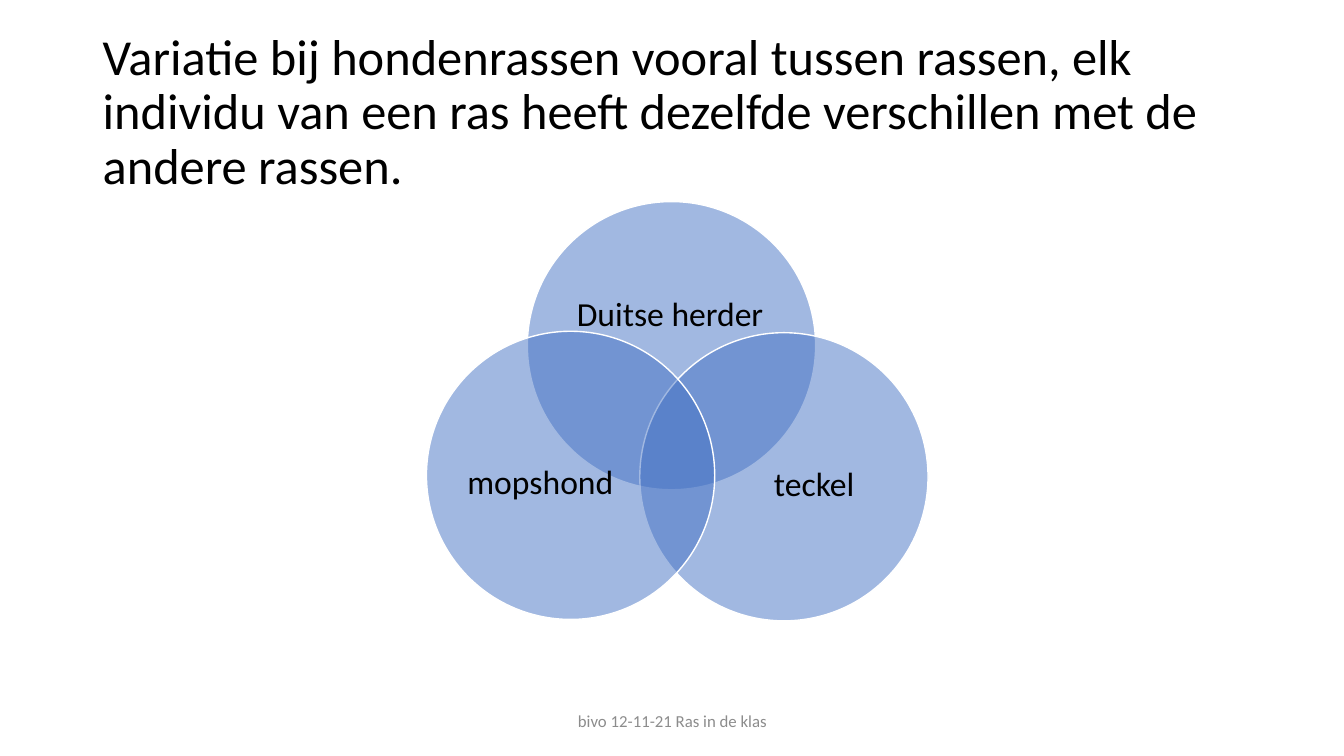
from dataclasses import dataclass

from lxml import etree
from pptx import Presentation
from pptx.dml.color import RGBColor
from pptx.enum.shapes import MSO_SHAPE
from pptx.enum.text import MSO_ANCHOR, PP_ALIGN
from pptx.oxml.ns import qn
from pptx.util import Inches, Pt

ELLIPSE = MSO_SHAPE.OVAL
MIDDLE = MSO_ANCHOR.MIDDLE
LEFT, CENTER = PP_ALIGN.LEFT, PP_ALIGN.CENTER


@dataclass(frozen=True)
class Theme:
    font: str = "Calibri"
    text: RGBColor = RGBColor(0x00, 0x00, 0x00)
    muted: RGBColor = RGBColor(0x8C, 0x8C, 0x8C)
    circle: RGBColor = RGBColor(0x44, 0x72, 0xC4)
    outline: RGBColor = RGBColor(0xFF, 0xFF, 0xFF)
    circle_opacity: int = 50
    title_size: int = 36
    label_size: int = 24
    footer_size: int = 12


THEME = Theme()
SLIDE_WIDTH, SLIDE_HEIGHT = 13.33, 7.5

TITLE = ("Variatie bij hondenrassen vooral tussen rassen, elk individu van een ras "
         "heeft dezelfde verschillen met de andere rassen.")
FOOTER = "bivo 12-11-21 Ras in de klas"

# Breed, circle offset and label box (left, top, width, height), in diameters
BREEDS = [
    ("Duitse herder", (0.35, 0), (0.13, 0.17, 0.73, 0.45)),
    ("teckel", (0.74, 0.455), (0.305, 0.255, 0.6, 0.55)),
    ("mopshond", (0, 0.45), (0.095, 0.255, 0.6, 0.55)),
]
VENN_HEIGHT_IN_DIAMETERS = 1.455


def add_text(slide, box, text, size, color=THEME.text, align=CENTER,
             spacing=0.9, inset=None):
    frame = slide.shapes.add_textbox(*map(Inches, box)).text_frame
    frame.word_wrap = True
    frame.vertical_anchor = MIDDLE
    if inset is not None:
        frame.margin_left = frame.margin_right = Inches(inset)
        frame.margin_top = frame.margin_bottom = Inches(inset)
    paragraph = frame.paragraphs[0]
    paragraph.text = text
    paragraph.alignment = align
    paragraph.line_spacing = spacing
    paragraph.font.name = THEME.font
    paragraph.font.size = Pt(size)
    paragraph.font.color.rgb = color


def add_circle(slide, left, top, diameter):
    circle = slide.shapes.add_shape(
        ELLIPSE, *map(Inches, (left, top, diameter, diameter)))
    circle.shadow.inherit = False
    circle.fill.solid()
    circle.fill.fore_color.rgb = THEME.circle
    fill_color = circle.fill._xPr.find(qn("a:solidFill"))[0]
    etree.SubElement(fill_color, qn("a:alpha"), val=str(THEME.circle_opacity * 1000))
    circle.line.color.rgb = THEME.outline
    circle.line.width = Pt(1)


def add_venn(slide, box):
    left, top, _, height = box
    diameter = height / VENN_HEIGHT_IN_DIAMETERS
    for breed, (dx, dy), (label_x, label_y, label_w, label_h) in BREEDS:
        circle_left, circle_top = left + dx * diameter, top + dy * diameter
        add_circle(slide, circle_left, circle_top, diameter)
        label_box = (circle_left + label_x * diameter, circle_top + label_y * diameter,
                     label_w * diameter, label_h * diameter)
        add_text(slide, label_box, breed, THEME.label_size, inset=0)


def add_breeds_slide(deck):
    slide = deck.slides.add_slide(deck.slide_layouts[6])
    add_text(slide, (0.92, 0.4, 11.5, 1.45), TITLE, THEME.title_size, align=LEFT)
    add_venn(slide, (4.23, 2, 4.98, 4.16))
    add_text(slide, (4.42, 6.95, 4.5, 0.4), FOOTER, THEME.footer_size,
             color=THEME.muted, spacing=1.0)


def main():
    deck = Presentation()
    deck.slide_width, deck.slide_height = Inches(SLIDE_WIDTH), Inches(SLIDE_HEIGHT)
    add_breeds_slide(deck)
    deck.save("out.pptx")


if __name__ == "__main__":
    main()
